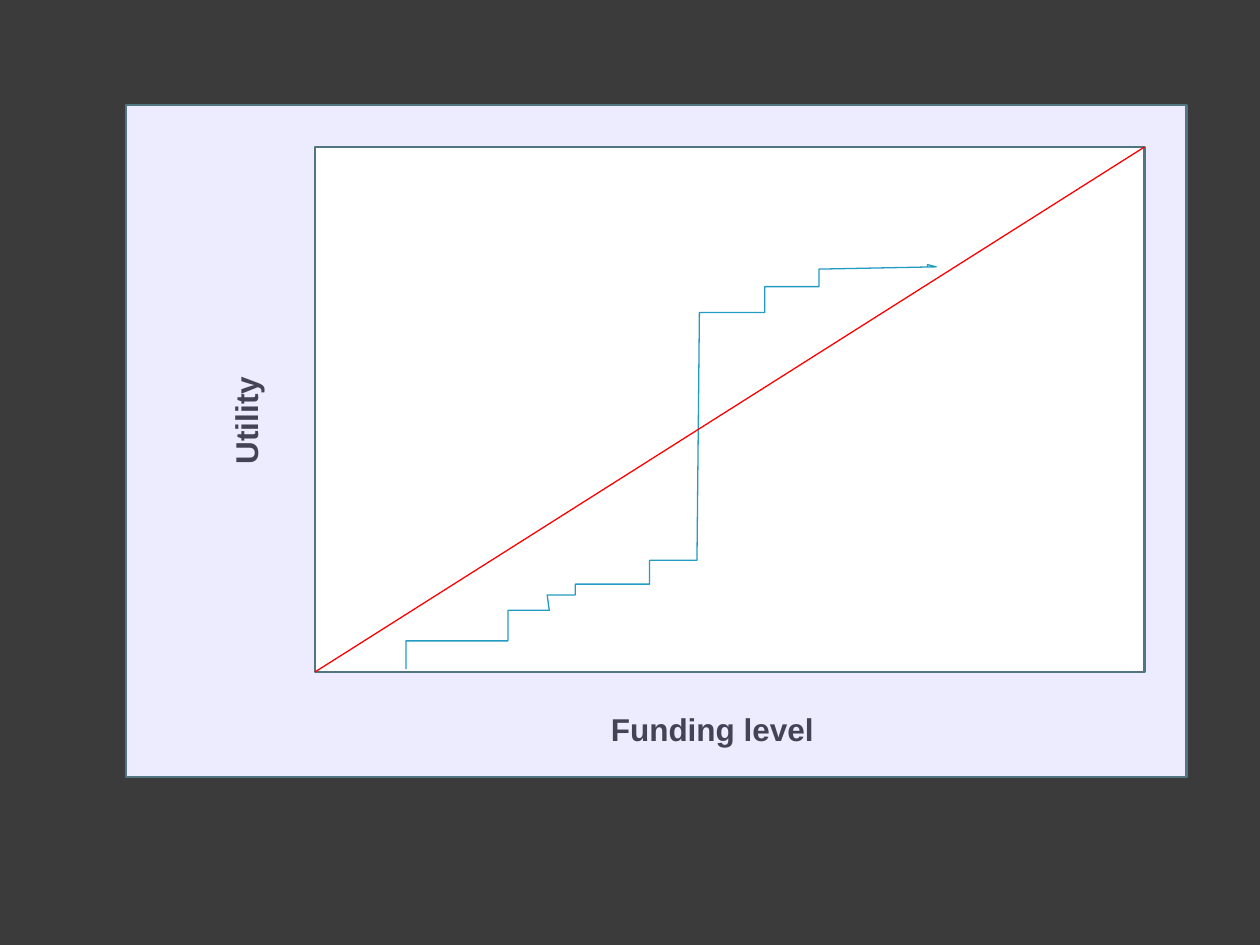
"""Builds a slide plotting stepwise utility against funding level."""
from lxml.etree import SubElement
from pptx import Presentation
from pptx.dml.color import RGBColor
from pptx.enum.shapes import MSO_CONNECTOR as CONN, MSO_SHAPE as SHAPE
from pptx.enum.text import MSO_AUTO_SIZE as FIT
from pptx.oxml.ns import qn
from pptx.util import Pt


def rgb(value):
    return RGBColor.from_string(value)


class Deck:
    font = "Arial"
    text_size = 18
    ink, border, panel_fill, plot_fill = "444255", "517682", "ECECFE", "FFFFFF"
    curve, diagonal, background = "239BC2", "FF0000", "3B3B3B"

    def __init__(self, prs):
        self.s = prs.slides.add_slide(prs.slide_layouts[6])
        fill = self.s.background.fill
        fill.solid()
        fill.fore_color.rgb = rgb(self.background)

    def stroke(self, sp, color, width):
        sp.line.color.rgb = rgb(color)
        sp.line.width = Pt(width)

    def rect(self, x, y, w, h, color):
        sp = self.s.shapes.add_shape(SHAPE.RECTANGLE, Pt(x), Pt(y), Pt(w), Pt(h))
        sp.shadow.inherit = False
        sp.fill.solid()
        sp.fill.fore_color.rgb = rgb(color)
        self.stroke(sp, self.border, 1.5)

    def label(self, text, x, y, w, h, rotation=0):
        sp = self.s.shapes.add_textbox(Pt(x), Pt(y), Pt(w), Pt(h))
        sp.rotation = rotation
        tf = sp.text_frame
        tf.word_wrap = False
        tf.auto_size = FIT.SHAPE_TO_FIT_TEXT
        r = tf.paragraphs[0].add_run()
        r.text = text
        r.font.name = self.font
        r.font.size = Pt(self.text_size)
        r.font.bold = True
        r.font.color.rgb = rgb(self.ink)

    def polyline(self, points):
        start, *rest = [(Pt(x), Pt(y)) for x, y in points]
        builder = self.s.shapes.build_freeform(*start)
        builder.add_line_segments(rest, close=False)
        sp = builder.convert_to_shape()
        sp.shadow.inherit = False
        sp.fill.background()
        self.stroke(sp, self.curve, 0.75)

    def line(self, x1, y1, x2, y2):
        sp = self.s.shapes.add_connector(CONN.STRAIGHT, Pt(x1), Pt(y1), Pt(x2), Pt(y2))
        self.stroke(sp, self.diagonal, 0.75)
        SubElement(sp._element.spPr, qn("a:effectLst"))


def main():
    prs = Presentation()
    prs.slide_width, prs.slide_height = Pt(720), Pt(540)
    deck = Deck(prs)
    left, top, width, height = 180, 84, 474, 300
    deck.rect(72, 60, 606, 384, deck.panel_fill)
    deck.rect(left, top, width, height, deck.plot_fill)
    deck.label("Funding level", 342, 402, 132, 29)
    deck.label("Utility", 108, 225.5, 65, 29, rotation=270)
    deck.polyline([
        (232, 382.3), (232, 366.2), (290.3, 366.2), (290.3, 348.7),
        (313.9, 348.7), (312.7, 340), (328.8, 340), (328.8, 333.8),
        (371.2, 333.8), (371.2, 320.2), (398.3, 320.2), (399.7, 178.6),
        (437, 178.6), (437, 163.8), (468, 163.8), (468, 153.8),
        (535, 152.5), (530, 151.2), (530, 152.5),
    ])
    deck.line(left, top + height, left + width, top)
    prs.save("out.pptx")


if __name__ == "__main__":
    main()
